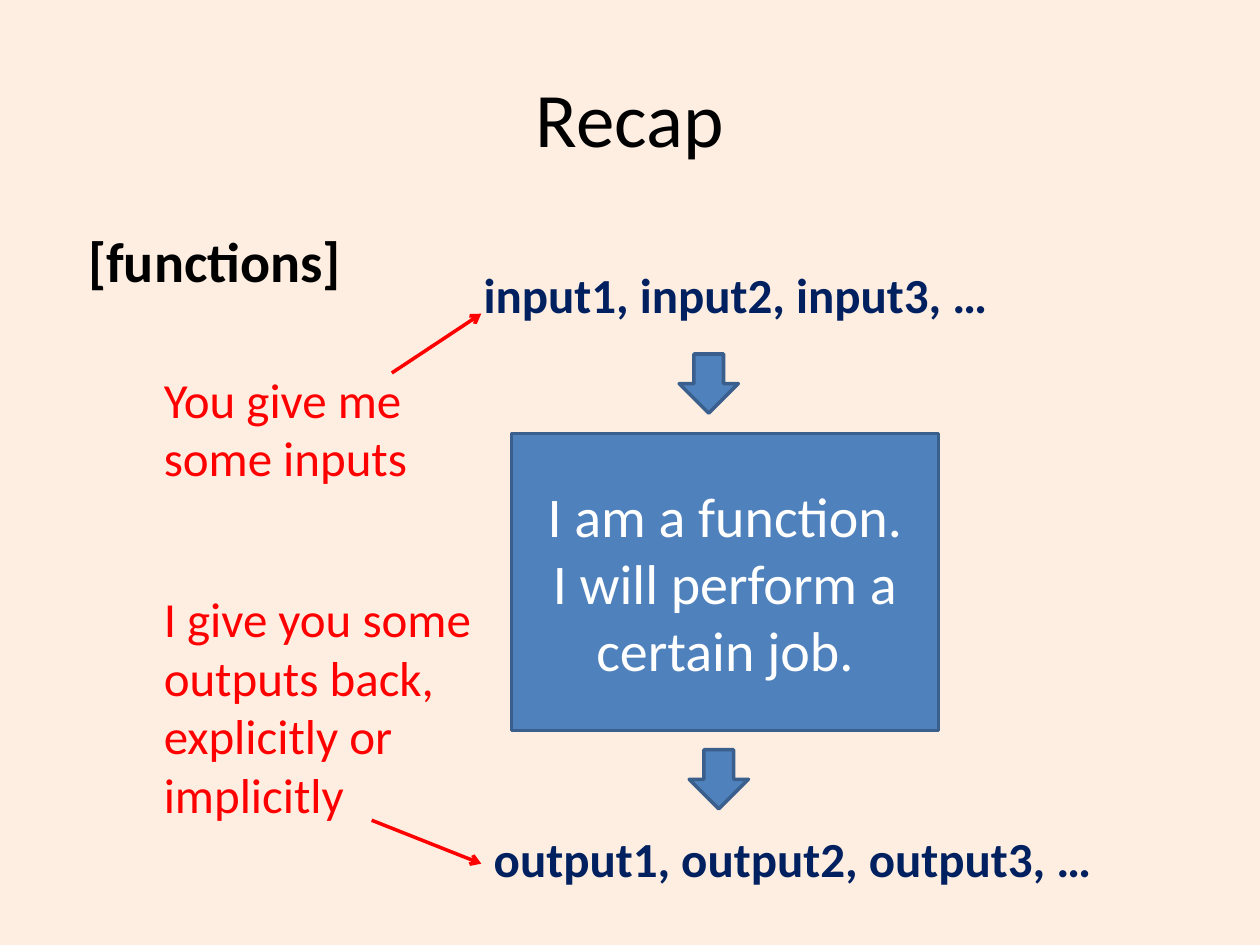
from pptx import Presentation
from pptx.dml.color import RGBColor
from pptx.enum.shapes import MSO_CONNECTOR, MSO_SHAPE
from pptx.enum.text import MSO_ANCHOR, PP_ALIGN
from pptx.oxml.ns import qn
from pptx.util import Inches, Pt
from lxml.etree import SubElement

theme = {
    "font": "Calibri", "paper": "FEEEE1", "black": "000000", "white": "FFFFFF",
    "navy": "002060", "red": "FF0000", "blue": "4F81BD", "edge": "3A5F8C",
    "title": 44, "large": 32, "small": 28, "line": 2,
}

deck = Presentation()
deck.slide_width, deck.slide_height = Inches(10), Inches(7.5)
slide = deck.slides.add_slide(deck.slide_layouts[6])
col, row = deck.slide_width / 10, deck.slide_height / 7.5


def color(name):
    return RGBColor.from_string(theme[name])


def write(shape, lines, size, ink, bold=False, **form):
    """Fill a shape with paragraphs that share one format."""
    frame = shape.text_frame
    frame.word_wrap = True
    frame.text = "\n".join(lines)
    for para in frame.paragraphs:
        para.font.name, para.font.size = theme["font"], Pt(theme[size])
        para.font.bold, para.font.color.rgb = bold, color(ink)
        for key, value in form.items():
            setattr(para, key, value)
    return frame


slide.background.fill.solid()
slide.background.fill.fore_color.rgb = color("paper")

# Text: name, place in columns and rows, wording, size, ink, bold, left margin, format
center = {"alignment": PP_ALIGN.CENTER}
tight = {"line_spacing": 0.9}
texts = [
    ("title", (0.5, 0.3, 9, 1.25), "Recap", "title", "black", False, 0, center),
    ("topic", (0.5, 1.75, 9, 0.65), "[functions]", "large", "black", True, 0.1, {}),
    ("input", (3.74, 2.1, 4.41, 0.55), "input1, input2, input3, …",
     "small", "navy", True, 0, tight),
    ("output", (3.82, 6.58, 6.18, 0.55), "output1, output2, output3, …",
     "small", "navy", True, 0, tight),
    ("give", (0.83, 2.88, 3.23, 1.18), "You give me some inputs",
     "small", "red", False, 0.37, {}),
    ("return", (0.83, 4.62, 3.23, 1.97),
     "I give you some outputs back, explicitly or implicitly",
     "small", "red", False, 0.37, {}),
]
boxes = {}
for name, (x, y, w, h), words, size, ink, bold, margin, form in texts:
    box = slide.shapes.add_textbox(int(x * col), int(y * row), int(w * col), int(h * row))
    frame = write(box, [words], size, ink, bold, **form)
    frame.margin_left = Inches(0.1 + margin)
    boxes[name] = box
boxes["title"].text_frame.vertical_anchor = MSO_ANCHOR.MIDDLE

# Function block with an arrow into it and one out of it
blocks = [
    (MSO_SHAPE.RECTANGLE, 4.06, 3.44, 3.39, 2.36,
     ["I am a function.", "I will perform a certain job."]),
    (MSO_SHAPE.DOWN_ARROW, 5.39, 2.81, 0.47, 0.47, []),
    (MSO_SHAPE.DOWN_ARROW, 5.47, 5.95, 0.47, 0.47, []),
]
for kind, x, y, w, h, lines in blocks:
    block = slide.shapes.add_shape(kind, int(x * col), int(y * row), int(w * col), int(h * row))
    block.shadow.inherit = False
    block.fill.solid()
    block.fill.fore_color.rgb = color("blue")
    block.line.color.rgb, block.line.width = color("edge"), Pt(theme["line"])
    if lines:
        frame = write(block, lines, "large", "white", **center)
        frame.vertical_anchor = MSO_ANCHOR.MIDDLE

# Red pointers from the remarks to the inputs and outputs
pointers = [
    ((3.11, 2.96), (3.82, 2.49), None),
    ((2.95, 6.51), (3.82, 6.86), "output"),
]
for (x1, y1), (x2, y2), goal in pointers:
    link = slide.shapes.add_connector(
        MSO_CONNECTOR.STRAIGHT, int(x1 * col), int(y1 * row), int(x2 * col), int(y2 * row))
    if goal:
        link.end_connect(boxes[goal], 1)
    link.line.color.rgb, link.line.width = color("red"), Pt(theme["line"])
    SubElement(link.line._get_or_add_ln(), qn("a:tailEnd")).set("type", "arrow")
    SubElement(link._element.spPr, qn("a:effectLst"))

deck.save("out.pptx")
